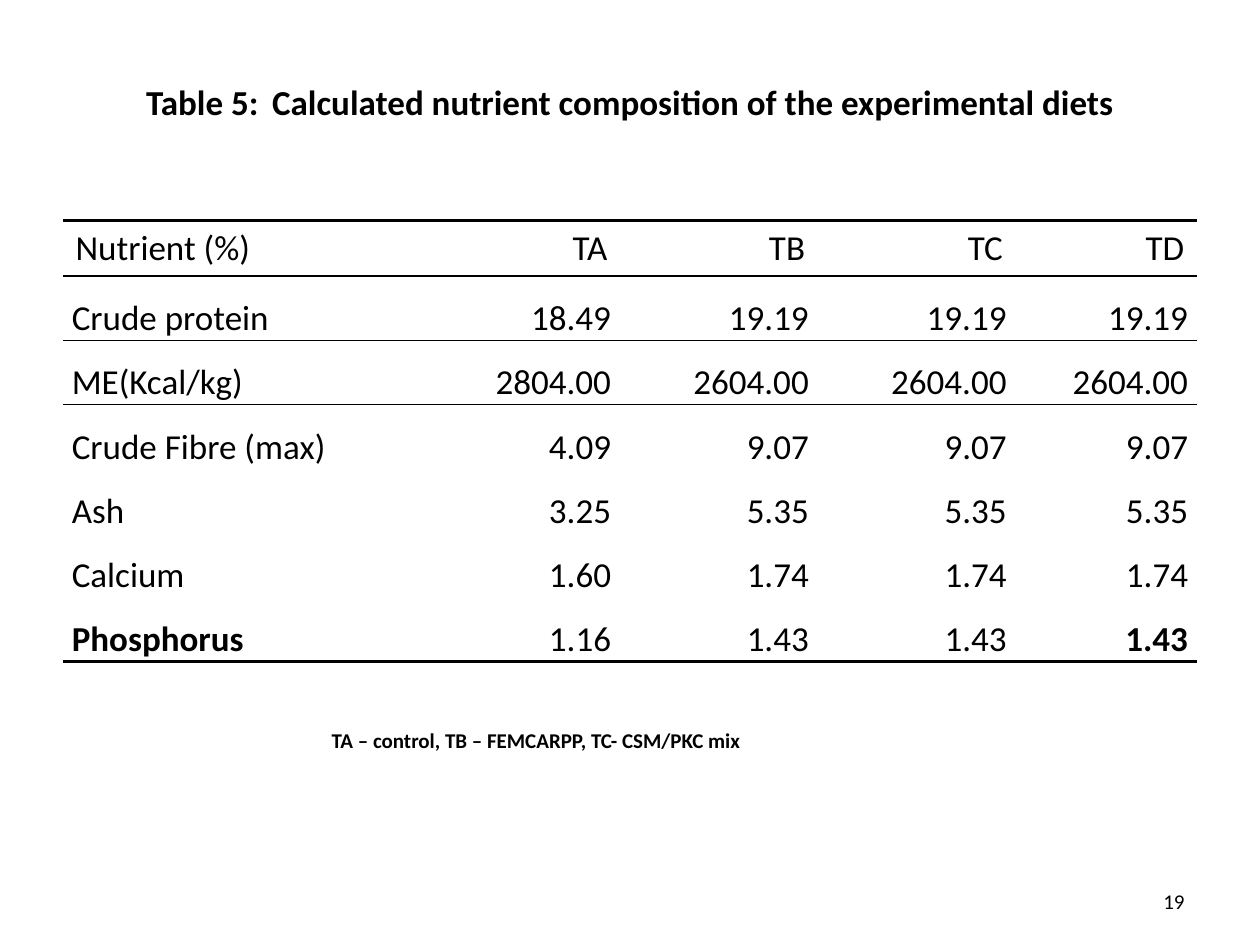
import dataclasses

import pptx
import pptx.dml.color
import pptx.enum.text
import pptx.oxml
import pptx.oxml.ns
import pptx.util

Inches = pptx.util.Inches
Align = pptx.enum.text.PP_ALIGN
Anchor = pptx.enum.text.MSO_ANCHOR


@dataclasses.dataclass(frozen=True)
class Theme:
    """Colours, font and type sizes of the slide."""
    ink: str = "000000"
    paper: str = "FFFFFF"
    font: str = "Calibri"
    body: int = 20
    small: int = 12
    plain_table: str = "{2D5ABB26-0587-4C30-8999-92F81FD0307C}"


THEME = Theme()
HEADER = ("Nutrient (%)", "TA", "TB", "TC", "TD")
NUTRIENTS = (
    ("Crude protein", "18.49", "19.19", "19.19", "19.19"),
    ("ME(Kcal/kg)", "2804.00", "2604.00", "2604.00", "2604.00"),
    ("Crude Fibre (max)", "4.09", "9.07", "9.07", "9.07"),
    ("Ash", "3.25", "5.35", "5.35", "5.35"),
    ("Calcium", "1.60", "1.74", "1.74", "1.74"),
    ("Phosphorus", "1.16", "1.43", "1.43", "1.43"),
)
COLUMN_WIDTHS = (2.85, 1.57, 1.57, 1.57, 1.44)
HEADER_HEIGHT, NUTRIENT_HEIGHT = 0.44, 0.51
RULES = {0: {"lnT": 2, "lnB": 1}, 1: {"lnT": 1, "lnB": 0.5},
         2: {"lnT": 0.5}, len(NUTRIENTS): {"lnB": 2}}
BOLD_CELLS = {(6, 0), (6, 4)}


def write(frame, text, size, align, bold=False, spacing=None):
    """Put one styled paragraph into a text frame."""
    paragraph = frame.paragraphs[0]
    paragraph.alignment = align
    paragraph.line_spacing = spacing
    run = paragraph.add_run()
    run.text = text
    for name, value in {"name": THEME.font, "size": pptx.util.Pt(size), "bold": bold}.items():
        setattr(run.font, name, value)
    run.font.color.rgb = pptx.dml.color.RGBColor.from_string(THEME.ink)


def add_label(slide, box, text, size, align, bold=False):
    """Place a vertically centred line of text in a box."""
    frame = slide.shapes.add_textbox(*map(Inches, box)).text_frame
    frame.word_wrap = True
    frame.vertical_anchor = Anchor.MIDDLE
    write(frame, text, size, align, bold)


def rule_cell(cell, rules):
    """Draw the given horizontal rules, in points, on a cell."""
    namespace = pptx.oxml.ns.nsdecls("a")
    properties = cell._tc.get_or_add_tcPr()
    for position, (side, points) in enumerate(rules.items()):
        properties.insert(position, pptx.oxml.parse_xml(
            f'<a:{side} {namespace} w="{pptx.util.Pt(points)}"><a:solidFill>'
            f'<a:srgbClr val="{THEME.ink}"/></a:solidFill></a:{side}>'))


def add_nutrient_table(slide, left, top):
    """Place the nutrient table with its top left corner at the given point."""
    rows = (HEADER, *NUTRIENTS)
    heights = [HEADER_HEIGHT] + [NUTRIENT_HEIGHT] * len(NUTRIENTS)
    table = slide.shapes.add_table(
        len(rows), len(HEADER), Inches(left), Inches(top),
        Inches(sum(COLUMN_WIDTHS)), Inches(sum(heights))).table
    table.first_row = table.horz_banding = False
    table._tbl.tblPr.find(pptx.oxml.ns.qn("a:tableStyleId")).text = THEME.plain_table
    for column, width in zip(table.columns, COLUMN_WIDTHS):
        column.width = Inches(width)
    nutrient_format = {
        "vertical_anchor": Anchor.BOTTOM,
        "margin_left": Inches(0.07), "margin_right": Inches(0.07),
        "margin_top": 0, "margin_bottom": 0,
    }
    for r, (values, height) in enumerate(zip(rows, heights)):
        table.rows[r].height = Inches(height)
        for c, value in enumerate(values):
            cell = table.cell(r, c)
            cell.fill.solid()
            cell.fill.fore_color.rgb = pptx.dml.color.RGBColor.from_string(THEME.paper)
            for name, setting in (nutrient_format if r else {}).items():
                setattr(cell, name, setting)
            label_align = Align.JUSTIFY if r else Align.LEFT
            write(cell.text_frame, value, THEME.body, Align.RIGHT if c else label_align,
                  (r, c) in BOLD_CELLS, 1.5 if r else None)
            rule_cell(cell, RULES.get(r, {}))


def main():
    """Build and save the slide."""
    deck = pptx.Presentation()
    deck.slide_width, deck.slide_height = Inches(10), Inches(7.5)
    slide = deck.slides.add_slide(deck.slide_layouts[6])
    add_label(slide, (0.5, 0.3, 9, 1.01),
              "Table 5:\tCalculated nutrient composition of the experimental diets",
              THEME.body, Align.CENTER, True)
    add_nutrient_table(slide, 0.5, 1.75)
    add_label(slide, (7.17, 6.95, 2.33, 0.4), "19", THEME.small, Align.RIGHT)
    add_label(slide, (1.93, 5.56, 4.65, 0.63),
              "TA – control, TB – FEMCARPP, TC- CSM/PKC mix",
              THEME.small, Align.CENTER, True)
    deck.save("out.pptx")


if __name__ == "__main__":
    main()
